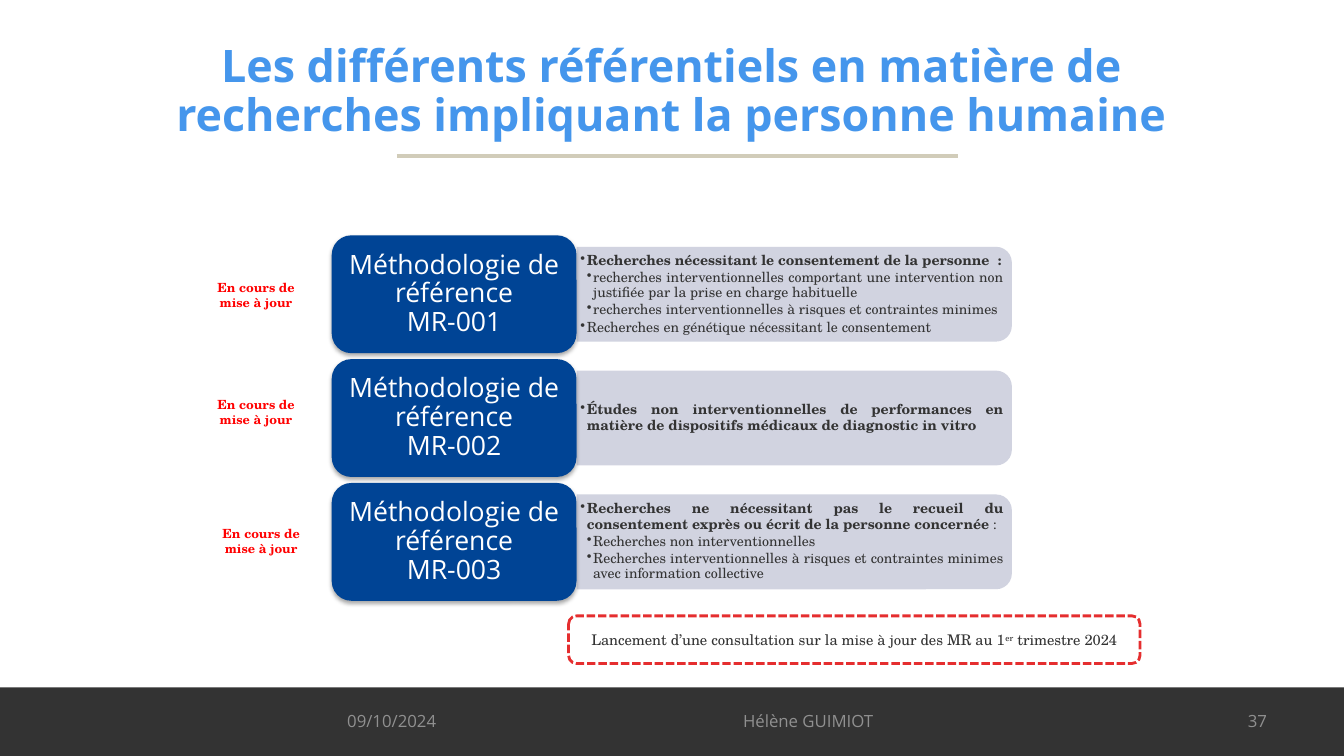
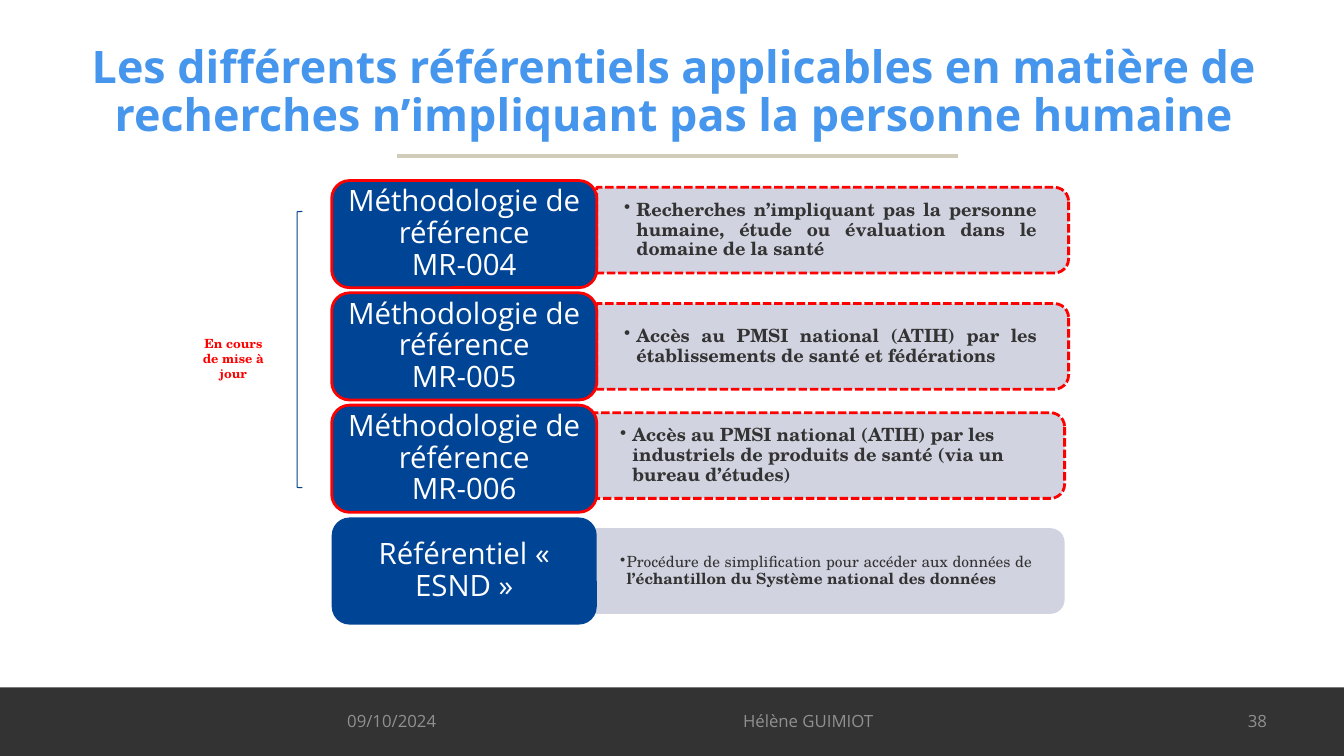
from dataclasses import dataclass

from lxml import etree
from pptx import Presentation
from pptx.dml.color import RGBColor
from pptx.enum.dml import MSO_LINE
from pptx.enum.shapes import MSO_CONNECTOR, MSO_SHAPE as SHAPE
from pptx.enum.text import MSO_ANCHOR as ANCHOR, MSO_AUTO_SIZE as AUTOSIZE, PP_ALIGN as ALIGN
from pptx.oxml.ns import qn
from pptx.util import Cm, Pt

SANS, SERIF = "Open Sans", "TeX Gyre Schola"
TITLE_BLUE, NAVY, BRACKET_BLUE = "4596EC", "004495", "004392"
LAVENDER, SAND, WHITE = "CCCFDD", "D1CCB9", "FFFFFF"
DARK, GREY = "333333", "909090"
RED, NOTICE_RED = "FF0000", "E52E2F"
SLIDE_W, SLIDE_H = 33.87, 19.05
STATUS = "En cours de mise à jour"


@dataclass
class Style:
    size: float
    color: str = DARK
    font: str = SERIF
    bold: bool = False


@dataclass
class Item:
    runs: list
    level: int = 1
    align: ALIGN = ALIGN.JUSTIFY


@dataclass
class Rows:
    top: float
    pitch: float
    label_w: float
    label_h: float
    label_size: float
    panel_w: float
    panel_h: float
    inset: tuple
    left: float = 8.36


@dataclass
class Reference:
    name: str
    items: list
    size: float = 10
    hanging: float = 0.16
    shift: tuple = (0, 0)
    outlined: bool = False
    shadowed: bool = False


TITLE = Style(32, TITLE_BLUE, SANS, True)
FOOTER = Style(12, GREY, SANS)
STATUS_STYLE = Style(9, RED, bold=True)


def rgb(color):
    return RGBColor.from_string(color)


def add_run(paragraph, text, style, bold=None, superscript=False):
    run = paragraph.add_run()
    run.text = text
    font = run.font
    font.name, font.size = style.font, Pt(style.size)
    font.bold = style.bold if bold is None else bold
    font.color.rgb = rgb(style.color)
    if superscript:
        font._element.set("baseline", "30000")


def set_frame(frame, anchor=ANCHOR.MIDDLE, inset=(0.25, 0.13)):
    frame.word_wrap = True
    frame.vertical_anchor = anchor
    frame.margin_left = frame.margin_right = Cm(inset[0])
    frame.margin_top = frame.margin_bottom = Cm(inset[1])


def add_bullet(paragraph, level, hanging):
    paragraph.level = level
    properties = paragraph._p.get_or_add_pPr()
    properties.set("marL", str(Cm(hanging * level)))
    properties.set("indent", str(-Cm(hanging)))
    etree.SubElement(properties, qn("a:buChar")).set("char", "•")


def add_text(slide, box, text, style, align=ALIGN.CENTER, anchor=ANCHOR.MIDDLE):
    frame = slide.shapes.add_textbox(*map(Cm, box)).text_frame
    set_frame(frame, anchor)
    paragraph = frame.paragraphs[0]
    paragraph.alignment = align
    add_run(paragraph, text, style)
    return frame


def add_block(slide, preset, box, fill=None, line=None, width=2, dashed=False):
    block = slide.shapes.add_shape(preset, *map(Cm, box))
    block.shadow.inherit = False
    if fill:
        block.fill.solid()
        block.fill.fore_color.rgb = rgb(fill)
    else:
        block.fill.background()
    if line:
        block.line.color.rgb = rgb(line)
        block.line.width = Pt(width)
        if dashed:
            block.line.dash_style = MSO_LINE.SQUARE_DOT
    else:
        block.line.fill.background()
    return block


def add_shadow(block):
    effects = block._element.spPr.find(qn("a:effectLst"))
    shadow = etree.SubElement(effects, qn("a:outerShdw"), blurRad=str(Pt(3.1)),
                              dist=str(Pt(1.8)), dir="5400000", rotWithShape="0")
    color = etree.SubElement(shadow, qn("a:srgbClr"), val="000000")
    etree.SubElement(color, qn("a:alpha"), val="35000")


def add_panel(slide, left, middle, rows, reference):
    width, height = rows.panel_w, rows.panel_h
    upright = (left + (width - height) / 2, middle - width / 2, height, width)
    panel = add_block(slide, SHAPE.ROUND_2_SAME_RECTANGLE, upright, LAVENDER,
                      RED if reference.outlined else None, dashed=True)
    panel.rotation = 90
    color = panel._element.spPr.find(qn("a:solidFill"))[0]
    etree.SubElement(color, qn("a:alpha"), val="90000")

    text_h = height - 0.24
    text_box = (left, middle - text_h / 2, width - 0.12, text_h)
    frame = slide.shapes.add_textbox(*map(Cm, text_box)).text_frame
    set_frame(frame, inset=rows.inset)
    for index, item in enumerate(reference.items):
        paragraph = frame.add_paragraph() if index else frame.paragraphs[0]
        add_bullet(paragraph, item.level, reference.hanging)
        paragraph.alignment = item.align
        paragraph.line_spacing = 0.9
        paragraph.space_after = Pt(reference.size * 0.15)
        for text, bold in item.runs:
            add_run(paragraph, text, Style(reference.size), bold)


def add_label(slide, top, rows, reference):
    label = add_block(slide, SHAPE.ROUNDED_RECTANGLE,
                      (rows.left, top, rows.label_w, rows.label_h), NAVY,
                      RED if reference.outlined else None)
    if reference.shadowed:
        add_shadow(label)
    set_frame(label.text_frame, inset=(0.21, 0.1))
    paragraph = label.text_frame.paragraphs[0]
    paragraph.alignment = ALIGN.CENTER
    paragraph.line_spacing = 0.9
    add_run(paragraph, reference.name, Style(rows.label_size, WHITE, SANS))


def add_references(slide, rows, references):
    for index, reference in enumerate(references):
        top = rows.top + index * rows.pitch
        dx, dy = reference.shift
        add_panel(slide, rows.left + rows.label_w + dx,
                  top + rows.label_h / 2 + dy, rows, reference)
        add_label(slide, top, rows, reference)


def add_status(slide, box):
    frame = add_text(slide, box, STATUS, STATUS_STYLE, anchor=ANCHOR.TOP)
    frame.auto_size = AUTOSIZE.SHAPE_TO_FIT_TEXT


def add_notice(slide, box, runs):
    notice = add_block(slide, SHAPE.ROUNDED_RECTANGLE, box, WHITE, NOTICE_RED, dashed=True)
    set_frame(notice.text_frame)
    paragraph = notice.text_frame.paragraphs[0]
    paragraph.alignment = ALIGN.CENTER
    for text, superscript in runs:
        add_run(paragraph, text, Style(10.5), superscript=superscript)


def start_slide(prs, title, title_box, number):
    slide = prs.slides.add_slide(prs.slide_layouts[5])
    heading = slide.shapes.title
    heading.left, heading.top, heading.width, heading.height = map(Cm, title_box)
    set_frame(heading.text_frame)
    heading.text_frame.auto_size = AUTOSIZE.NONE
    paragraph = heading.text_frame.paragraphs[0]
    paragraph.alignment = ALIGN.CENTER
    paragraph.line_spacing = 0.9
    add_run(paragraph, title, TITLE)

    add_block(slide, SHAPE.RECTANGLE, (0, 17.32, SLIDE_W, SLIDE_H - 17.32), DARK)
    rule = slide.shapes.add_connector(MSO_CONNECTOR.STRAIGHT,
                                      Cm(10), Cm(3.93), Cm(24.13), Cm(3.93))
    rule.line.color.rgb = rgb(SAND)
    rule.line.width = Pt(2.25)
    etree.SubElement(rule._element.spPr, qn("a:effectLst"))

    for left, width, text, align in (
        (8.5, 7.9, "09/10/2024", ALIGN.LEFT),
        (15.01, 10.72, "Hélène GUIMIOT", ALIGN.CENTER),
        (24.28, 7.9, str(number), ALIGN.RIGHT),
    ):
        add_text(slide, (left, 17.65, width, 1.02), text, FOOTER, align)
    return slide


def build_human_research(prs):
    slide = start_slide(
        prs, "Les différents référentiels en matière de recherches impliquant la personne humaine",
        (3.53, 1.14, 26.8, 2.39), 37)
    rows = Rows(top=5.93, pitch=3.12, label_w=6.17, label_h=2.97, label_size=19,
                panel_w=10.97, panel_h=2.39, inset=(0.1, 0.05))
    add_references(slide, rows, [
        Reference("Méthodologie de référence MR-001", [
            Item([("Recherches nécessitant le consentement de la personne  :", True)],
                 align=ALIGN.LEFT),
            Item([("recherches interventionnelles comportant une intervention non "
                   "justifiée par la prise en charge habituelle", False)], 2),
            Item([("recherches interventionnelles à risques et contraintes minimes", False)],
                 2, ALIGN.LEFT),
            Item([("Recherches en génétique nécessitant le consentement", False)],
                 align=ALIGN.LEFT),
        ], shadowed=True),
        Reference("Méthodologie de référence MR-002", [
            Item([("Études non interventionnelles de performances en matière de "
                   "dispositifs médicaux de diagnostic in vitro", True)]),
        ], shadowed=True),
        Reference("Méthodologie de référence MR-003", [
            Item([("Recherches ne nécessitant pas le recueil du consentement exprès "
                   "ou écrit de la personne concernée ", True), (":", False)]),
            Item([("Recherches non interventionnelles", False)], 2),
            Item([("Recherches interventionnelles à risques et contraintes minimes "
                   "avec information collective", False)], 2),
        ], shadowed=True),
    ])
    for left, top in ((5.13, 6.93), (5.13, 9.86), (5.26, 13.13)):
        add_status(slide, (left, top, 2.64, 1.02))
    add_notice(slide, (14.33, 15.52, 14.4, 1.2), [
        ("Lancement d’une consultation sur la mise à jour des MR au 1", False),
        ("er", True),
        (" trimestre 2024", False),
    ])


def build_other_research(prs):
    slide = start_slide(
        prs, "Les différents référentiels applicables en matière de recherches "
        "n’impliquant pas la personne humaine", (0.13, 0.76, 33.73, 3.18), 38)
    rows = Rows(top=4.55, pitch=2.83, label_w=6.68, label_h=2.7, label_size=21,
                panel_w=11.89, panel_h=2.16, inset=(0.69, 0.36))
    add_references(slide, rows, [
        Reference("Méthodologie de référence MR-004", [
            Item([("Recherches n’impliquant pas la personne humaine, étude ou "
                   "évaluation dans le domaine de la santé", True)]),
        ], 13, 0.31, (0, -0.1), outlined=True),
        Reference("Méthodologie de référence MR-005", [
            Item([("Accès au PMSI national (ATIH) par les établissements de santé "
                   "et fédérations", True)]),
        ], 13, 0.31, outlined=True),
        Reference("Méthodologie de référence MR-006", [
            Item([("Accès au PMSI national (ATIH) par les industriels de produits "
                   "de santé (via un bureau d’études)", True)], align=ALIGN.LEFT),
        ], 13, 0.31, (-0.1, -0.08), outlined=True),
        Reference("Référentiel « ESND »", [
            Item([("Procédure de simplification pour accéder aux données de ", False),
                  ("l’échantillon du Système national des données", True)]),
        ], 11, shift=(-0.1, 0)),
    ])
    add_block(slide, SHAPE.LEFT_BRACKET, (7.49, 5.33, 0.13, 6.96),
              line=BRACKET_BLUE, width=0.75)
    add_status(slide, (4.75, 8.33, 2.26, 1.42))


def main():
    prs = Presentation()
    prs.slide_width, prs.slide_height = Cm(SLIDE_W), Cm(SLIDE_H)
    build_human_research(prs)
    build_other_research(prs)
    prs.save("out.pptx")


if __name__ == "__main__":
    main()
